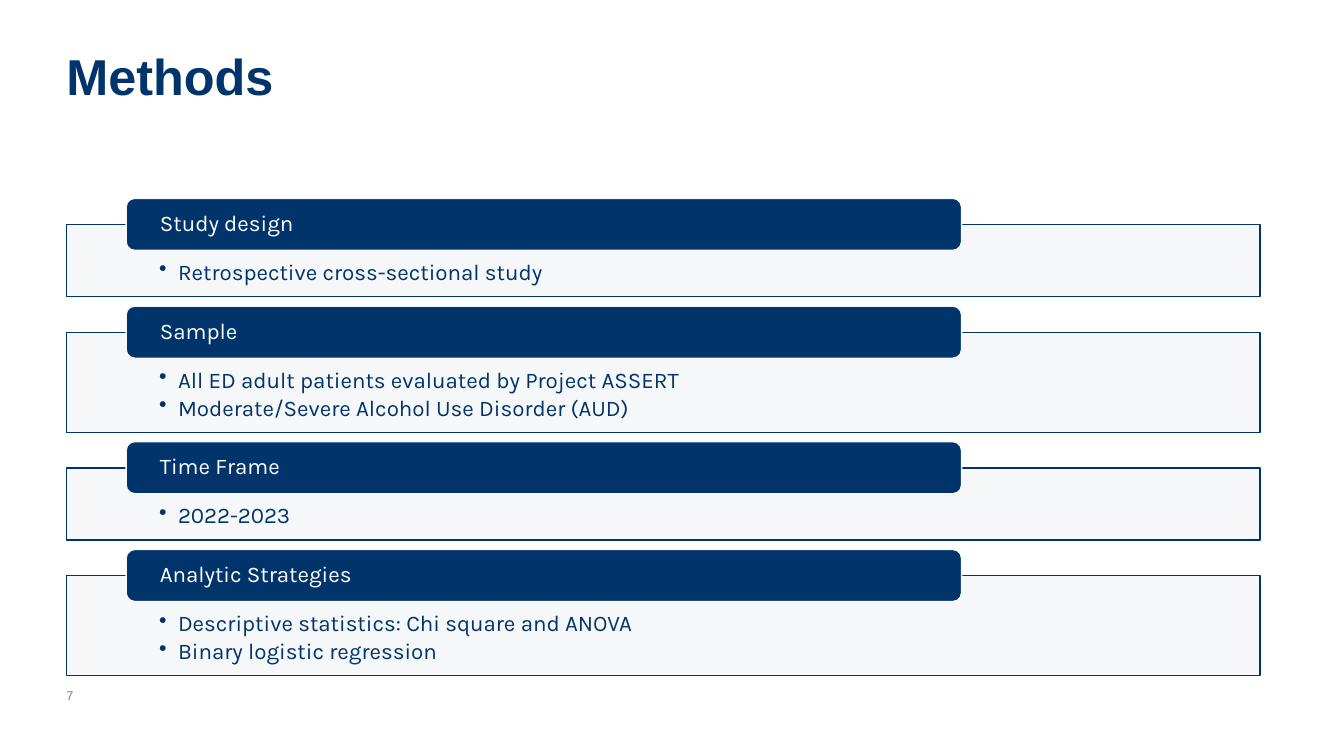
from lxml import etree
from pptx import Presentation
from pptx.dml.color import RGBColor
from pptx.enum.shapes import MSO_SHAPE
from pptx.enum.text import MSO_ANCHOR, PP_ALIGN
from pptx.oxml.ns import qn
from pptx.util import Pt

RECT, ROUNDED = MSO_SHAPE.RECTANGLE, MSO_SHAPE.ROUNDED_RECTANGLE
TOP, MIDDLE = MSO_ANCHOR.TOP, MSO_ANCHOR.MIDDLE
LEFT = PP_ALIGN.LEFT

NAVY, PALE, WHITE, GREY = "00346B", "F5F7F9", "FFFFFF", "808080"
MARGIN, CONTENT_WIDTH = 47.5, 852.5
SECTIONS_TOP, SECTION_GAP = 160.4, 25.4
FRAME_BASE, BULLET_PITCH = 31.8, 19.8
HEADER_INDENT, HEADER_RISE, HEADER_HEIGHT = 42.6, 18.7, 37.2
HEADER_SHARE = 0.7
BULLET_INDENT = 13.5

SECTIONS = [
    ("Study design", ["Retrospective cross-sectional study"]),
    ("Sample", ["All ED adult patients evaluated by Project ASSERT",
                "Moderate/Severe Alcohol Use Disorder (AUD)"]),
    ("Time Frame", ["2022-2023"]),
    ("Analytic Strategies", ["Descriptive statistics: Chi square and ANOVA",
                             "Binary logistic regression"]),
]


def colour(hex_value):
    return RGBColor.from_string(hex_value)


def apply(target, formats):
    for name, value in formats.items():
        setattr(target, name, value)


def write(shape, lines, size, font, hex_value, insets=(0, 0, 0, 0),
          anchor=MIDDLE, bold=False, spacing=0.9, bulleted=False):
    frame = shape.text_frame
    left, top, right, bottom = map(Pt, insets)
    apply(frame, dict(word_wrap=True, vertical_anchor=anchor, margin_left=left,
                      margin_top=top, margin_right=right, margin_bottom=bottom))
    for number, line in enumerate(lines):
        paragraph = frame.add_paragraph() if number else frame.paragraphs[0]
        paragraph.text = line
        apply(paragraph, dict(alignment=LEFT, line_spacing=spacing))
        if bulleted:
            paragraph.space_after = Pt(2.8)
            properties = paragraph._p.get_or_add_pPr()
            properties.set("marL", str(Pt(BULLET_INDENT)))
            properties.set("indent", str(-Pt(BULLET_INDENT)))
            etree.SubElement(properties, qn("a:buChar")).set("char", "•")
        apply(paragraph.font, dict(size=Pt(size), name=font, bold=bold))
        paragraph.font.color.rgb = colour(hex_value)


def add_panel(slide, kind, box, fill, line):
    panel = slide.shapes.add_shape(kind, *map(Pt, box))
    panel.shadow.inherit = False
    panel.fill.solid()
    panel.fill.fore_color.rgb = colour(fill)
    panel.line.color.rgb = colour(line)
    panel.line.width = Pt(1)
    return panel


def add_label(slide, box, text, **formats):
    label = slide.shapes.add_textbox(*map(Pt, box))
    write(label, [text], font="Arial", **formats)


def add_section(slide, box, heading, bullets):
    left, top, width, height = box
    # Framed bullets on a slightly transparent fill
    frame = add_panel(slide, RECT, box, PALE, NAVY)
    fill_colour = frame.fill._xPr.find(qn("a:solidFill"))[0]
    etree.SubElement(fill_colour, qn("a:alpha")).set("val", "90000")
    write(frame, bullets, 16, "Karla", NAVY, insets=(66.2, 26, 66.2, 8.6),
          anchor=TOP, bulleted=True)
    # Heading bar overlapping the top edge
    header_box = (left + HEADER_INDENT, top - HEADER_RISE,
                  width * HEADER_SHARE, HEADER_HEIGHT)
    header = add_panel(slide, ROUNDED, header_box, NAVY, PALE)
    write(header, [heading], 16, "Karla", WHITE, insets=(22.3, 0, 22.3, 0))


def add_sections(slide, left, top, width):
    for heading, bullets in SECTIONS:
        height = FRAME_BASE + BULLET_PITCH * len(bullets)
        add_section(slide, (left, top, width, height), heading, bullets)
        top += height + SECTION_GAP


def main():
    presentation = Presentation()
    apply(presentation, dict(slide_width=Pt(960), slide_height=Pt(540)))
    slide = presentation.slides.add_slide(presentation.slide_layouts[6])
    # Title and page number
    add_label(slide, (MARGIN, 36.7, CONTENT_WIDTH, 40.3), "Methods",
              size=36, hex_value=NAVY, bold=True)
    add_label(slide, (MARGIN, 488.2, 216, 16.6), "7",
              size=9, hex_value=GREY, spacing=1.0)
    # Method sections
    add_sections(slide, MARGIN, SECTIONS_TOP, CONTENT_WIDTH)
    presentation.save("out.pptx")


if __name__ == "__main__":
    main()
